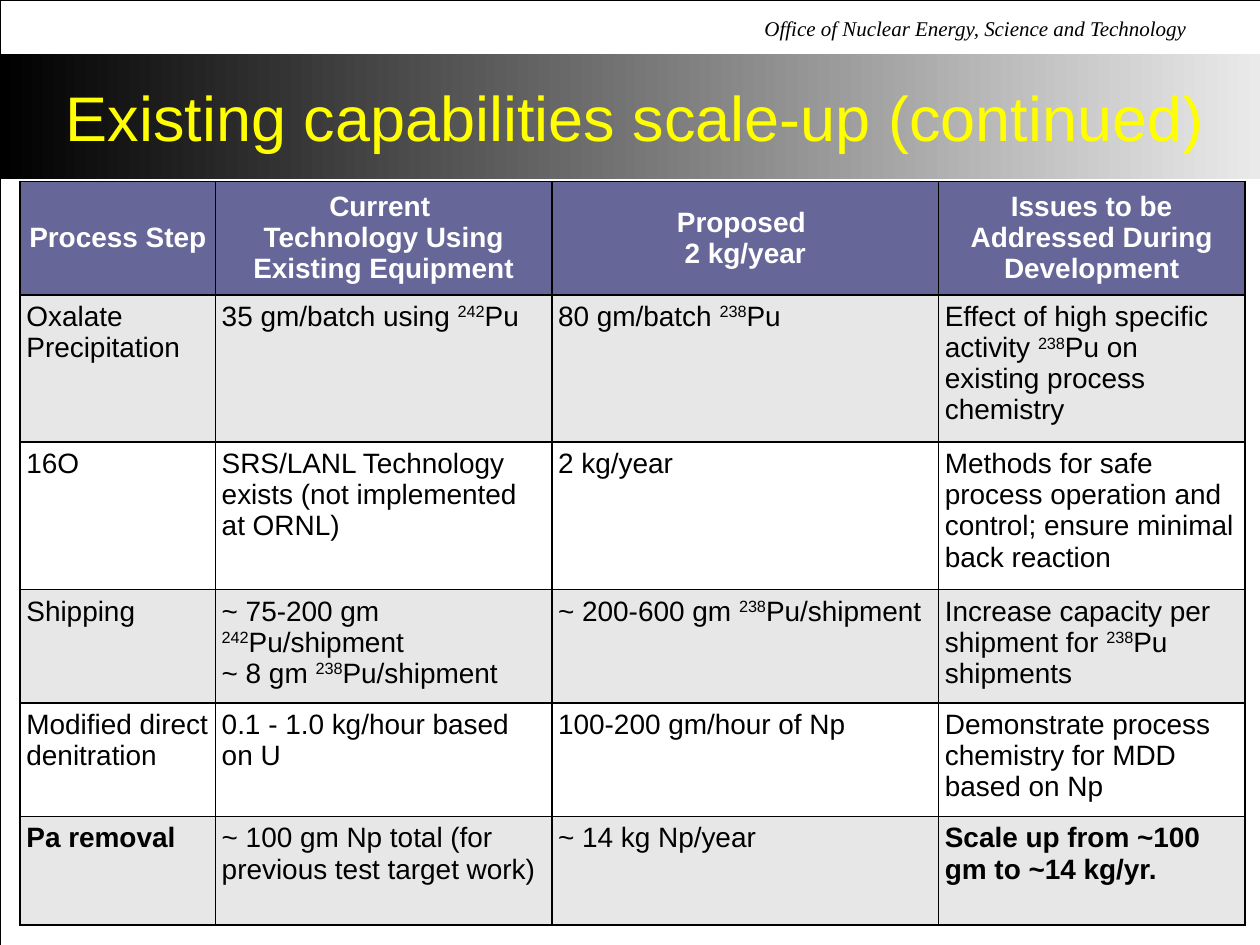
import pptx
import pptx.util
import pptx.dml.color
import pptx.enum.shapes
import pptx.enum.text
import pptx.oxml
import pptx.oxml.ns
from pptx.util import Inches, Pt

ALIGN = pptx.enum.text.PP_ALIGN
ANCHOR = pptx.enum.text.MSO_ANCHOR
COLORS = {
    "black": "000000", "white": "FFFFFF", "title": "FFFF00", "band_end": "EAEAEA",
    "header": "666699", "stripe": "E7E7E7",
}

OFFICE = "Office of Nuclear Energy, Science and Technology "
TITLE = "Existing capabilities scale-up (continued)"
# Text between carets is superscript; a line break starts a paragraph.
HEADER = [
    "Process Step ",
    "Current \nTechnology Using\nExisting Equipment",
    "Proposed \n2 kg/year",
    "Issues to be Addressed During Development",
]
STEPS = [
    ["Oxalate\nPrecipitation", "35 gm/batch using ^242^Pu", "80 gm/batch ^238^Pu",
     "Effect of high specific activity ^238^Pu on existing process chemistry"],
    ["16O", "SRS/LANL Technology exists (not implemented at ORNL)", "2 kg/year",
     "Methods for safe process operation and control; ensure minimal back reaction"],
    ["Shipping", "~ 75-200 gm ^242^Pu/shipment\n~ 8 gm ^238^Pu/shipment",
     "~ 200-600 gm ^238^Pu/shipment",
     "Increase capacity per shipment for ^238^Pu shipments"],
    ["Modified direct denitration", "0.1 - 1.0 kg/hour based on U",
     "100-200 gm/hour of Np", "Demonstrate process chemistry for MDD based on Np"],
    ["Pa removal", "~ 100 gm Np total (for previous test target work)",
     "~ 14 kg Np/year", "Scale up from ~100 gm to ~14 kg/yr."],
]
BOLD_CELLS = {(5, 0), (5, 3)}
COLUMN_WIDTHS = [1.55, 2.67, 3.07, 2.43]
ROW_HEIGHTS = [0.9, 1.17, 1.17, 0.9, 0.9, 0.86]


def rgb(name):
    return pptx.dml.color.RGBColor.from_string(COLORS[name])


def write(frame, text, size=16, font="Arial", color="black", bold=False,
          italic=False, align=ALIGN.LEFT, spacing=None):
    """Fill a text frame, raising any text between carets."""
    for index, line in enumerate(text.split("\n")):
        paragraph = frame.paragraphs[0] if index == 0 else frame.add_paragraph()
        paragraph.alignment = align
        paragraph.line_spacing = spacing
        for part, piece in enumerate(line.split("^")):
            run = paragraph.add_run()
            run.text = piece
            run.font.size, run.font.name = Pt(size), font
            run.font.bold, run.font.italic = bold, italic
            run.font.color.rgb = rgb(color)
            if part % 2:
                run.font._element.set("baseline", "30000")


def add_rectangle(slide, left, top, width, height):
    shape = slide.shapes.add_shape(
        pptx.enum.shapes.MSO_SHAPE.RECTANGLE,
        Inches(left), Inches(top), Inches(width), Inches(height))
    shape.shadow.inherit = False
    return shape


def add_borders(cell):
    properties = cell._tc.get_or_add_tcPr()
    for index, side in enumerate(("lnL", "lnR", "lnT", "lnB")):
        properties.insert(index, pptx.oxml.parse_xml(
            f'<a:{side} {pptx.oxml.ns.nsdecls("a")} w="12700"><a:solidFill>'
            f'<a:srgbClr val="{COLORS["black"]}"/></a:solidFill></a:{side}>'))


def add_text_shadow(run):
    run.font.fill._xPr.find(pptx.oxml.ns.qn("a:solidFill")).addnext(pptx.oxml.parse_xml(
        f'<a:effectLst {pptx.oxml.ns.nsdecls("a")}>'
        '<a:outerShdw dist="38100" dir="2700000" algn="tl">'
        f'<a:srgbClr val="{COLORS["black"]}"/></a:outerShdw></a:effectLst>'))


def add_backdrop(slide):
    band = add_rectangle(slide, 0, 0.43, 10, 0.99)
    band.line.fill.background()
    band.fill.gradient()
    band.fill.gradient_angle = 0
    for stop, color, position in zip(band.fill.gradient_stops, ("black", "band_end"), (0, 1)):
        stop.color.rgb, stop.position = rgb(color), position

    border = add_rectangle(slide, 0, 0, 10, 7.5)
    border.fill.background()
    border.line.color.rgb, border.line.width = rgb("black"), Pt(0.25)

    office = slide.shapes.add_textbox(Inches(5.92), Inches(0.12), Inches(3.64), Inches(0.25))
    office.text_frame.word_wrap = False
    write(office.text_frame, OFFICE, size=12, font="Times New Roman", italic=True,
          align=ALIGN.RIGHT, spacing=0.75)


def add_process_table(slide):
    rows = [HEADER] + STEPS
    table = slide.shapes.add_table(
        len(rows), len(HEADER), Inches(0.16), Inches(1.44),
        Inches(sum(COLUMN_WIDTHS)), Inches(sum(ROW_HEIGHTS))).table
    for column, width in zip(table.columns, COLUMN_WIDTHS):
        column.width = Inches(width)
    for r, texts in enumerate(rows):
        table.rows[r].height = Inches(ROW_HEIGHTS[r])
        is_header = r == 0
        fill = "header" if is_header else "stripe" if r % 2 else "white"
        for c, text in enumerate(texts):
            cell = table.cell(r, c)
            cell.margin_left = cell.margin_right = Inches(0.05)
            cell.margin_top = cell.margin_bottom = Inches(0.05)
            cell.vertical_anchor = ANCHOR.MIDDLE if is_header else ANCHOR.TOP
            cell.fill.solid()
            cell.fill.fore_color.rgb = rgb(fill)
            add_borders(cell)
            write(cell.text_frame, text, color="white" if is_header else "black",
                  bold=is_header or (r, c) in BOLD_CELLS,
                  align=ALIGN.CENTER if is_header else ALIGN.LEFT)


def format_title(slide):
    title = slide.shapes.title
    title.left, title.top = Inches(0.33), Inches(0.67)
    title.width, title.height = Inches(9.42), Inches(0.5)
    frame = title.text_frame
    frame.vertical_anchor = ANCHOR.MIDDLE
    frame.word_wrap = True
    write(frame, TITLE, size=36, color="title", align=ALIGN.CENTER)
    add_text_shadow(frame.paragraphs[0].runs[0])
    slide.shapes._spTree.append(title._element)  # in front of the band


def main():
    deck = pptx.Presentation()
    deck.slide_width, deck.slide_height = Inches(10), Inches(7.5)
    slide = deck.slides.add_slide(deck.slide_layouts[5])
    add_backdrop(slide)
    add_process_table(slide)
    format_title(slide)
    deck.save("out.pptx")


if __name__ == "__main__":
    main()
